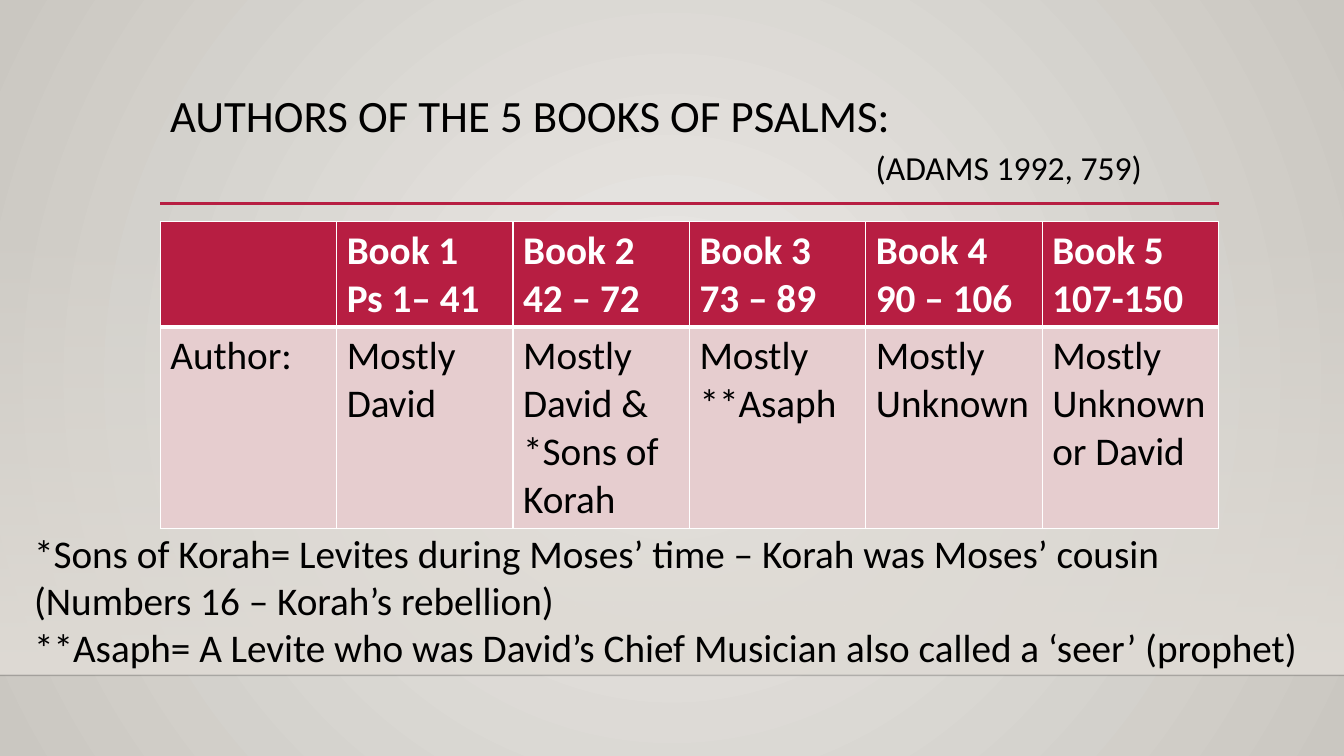
from lxml import etree
from pptx import Presentation
from pptx.dml.color import RGBColor
from pptx.enum import shapes, text
from pptx.oxml import parse_xml
from pptx.oxml.ns import nsdecls, qn
from pptx.util import Cm, Pt

CRIMSON = RGBColor(0xB7, 0x1E, 0x42)
ROSE = RGBColor(0xE6, 0xCD, 0xCF)
WHITE = RGBColor(0xFF, 0xFF, 0xFF)
BLACK = RGBColor(0, 0, 0)
NEAR_BLACK = RGBColor(0, 0, 1)
STONE = RGBColor(0xDF, 0xDB, 0xD5)
GLOW = RGBColor(0xEC, 0xEA, 0xE7)
EDGE = RGBColor(0xCA, 0xC7, 0xC1)


def style(paragraph, size, color, bold=False):
    for run in paragraph.runs:
        run.font.name = "Calibri"
        run.font.size = Pt(size)
        run.font.bold = bold
        run.font.color.rgb = color


prs = Presentation()
prs.slide_width, prs.slide_height = Cm(33.87), Cm(19.05)
slide = prs.slides.add_slide(prs.slide_layouts[6])

# Background glow and the wall that fades in above the floor line
backdrop = slide.background.fill
backdrop.gradient()
wall = slide.shapes.add_shape(shapes.MSO_SHAPE.RECTANGLE, 0, Cm(5.61), Cm(33.87), Cm(11.4))
wall.shadow.inherit = False
wall.line.fill.background()
wall.fill.gradient()
wall.fill.gradient_angle = 270
for fill, colors in ((backdrop, (GLOW, EDGE)), (wall.fill, (STONE, STONE))):
    for stop, color, position in zip(fill.gradient_stops, colors, (0, 1)):
        stop.color.rgb = color
        stop.position = position

glow = slide.background._cSld.find(".//" + qn("a:gradFill"))
glow.replace(glow.find(qn("a:lin")), parse_xml(
    f'<a:path {nsdecls("a")} path="circle">'
    '<a:fillToRect l="50000" t="50000" r="50000" b="50000"/></a:path>'))
clear_stop = wall._element.spPr.find(".//" + qn("a:srgbClr"))
etree.SubElement(clear_stop, qn("a:alpha"), val="0")

# Floor line and title rule
for left, right, y, color, width, alpha in (
        (0, 33.87, 17.02, NEAR_BLACK, 1, "20000"),
        (4.04, 30.73, 5.13, CRIMSON, 2.5, "100000")):
    rule = slide.shapes.add_connector(
        shapes.MSO_CONNECTOR.STRAIGHT, Cm(left), Cm(y), Cm(right), Cm(y))
    rule.line.color.rgb = color
    rule.line.width = Pt(width)
    properties = rule._element.spPr
    etree.SubElement(properties.find(".//" + qn("a:srgbClr")), qn("a:alpha"), val=alpha)
    etree.SubElement(properties, qn("a:effectLst"))

# Title with its citation set in from the left
title = slide.shapes.add_textbox(Cm(4.04), Cm(2.24), Cm(26.67), Cm(2.92)).text_frame
title.word_wrap = True
title.vertical_anchor = text.MSO_ANCHOR.TOP
title.text = "AUTHORS OF THE 5 BOOKS OF PSALMS:\n(ADAMS 1992, 759)"
heading, citation = title.paragraphs
heading.line_spacing = citation.line_spacing = 0.9
citation.space_before = Pt(6.7)
citation._p.get_or_add_pPr().set("marL", str(Cm(17.78)))
style(heading, 32, BLACK)
style(citation, 24, BLACK)

# Authors table
rows = (
    ("", "Book 1\nPs 1– 41", "Book 2\n42 – 72", "Book 3\n73 – 89",
     "Book 4\n90 – 106", "Book 5\n107-150"),
    ("Author:", "Mostly David", "Mostly David & *Sons of Korah", "Mostly **Asaph",
     "Mostly Unknown", "Mostly Unknown or David"),
)
authors = slide.shapes.add_table(2, 6, Cm(4.04), Cm(5.59), Cm(26.67), Cm(7.73)).table
authors.rows[0].height, authors.rows[1].height = Cm(2.65), Cm(5.08)
for r, row in enumerate(rows):
    is_header = r == 0
    borders = {"lnL": 1, "lnR": 1, "lnT": 1 if is_header else 3, "lnB": 3 if is_header else 1}
    for c, content in enumerate(row):
        cell = authors.cell(r, c)
        cell.text_frame.text = content
        for paragraph in cell.text_frame.paragraphs:
            style(paragraph, 28, WHITE if is_header else BLACK, is_header)
        cell_properties = cell._tc.get_or_add_tcPr()
        for side, width in borders.items():
            border = etree.SubElement(cell_properties, qn("a:" + side), w=str(Pt(width)))
            paint = etree.SubElement(border, qn("a:solidFill"))
            etree.SubElement(paint, qn("a:srgbClr"), val=str(WHITE))
        cell.fill.solid()
        cell.fill.fore_color.rgb = CRIMSON if is_header else ROSE

# Footnotes
footnotes = slide.shapes.add_textbox(Cm(0.61), Cm(13.21), Cm(32.66), Cm(3.84)).text_frame
footnotes.word_wrap = True
footnotes.text = (
    "*Sons of Korah= Levites during Moses’ time – Korah was Moses’ cousin "
    "(Numbers 16 – Korah’s rebellion)\n"
    "**Asaph= A Levite who was David’s Chief Musician also called a ‘seer’ (prophet)")
for note in footnotes.paragraphs:
    style(note, 28, BLACK)

prs.save("out.pptx")
